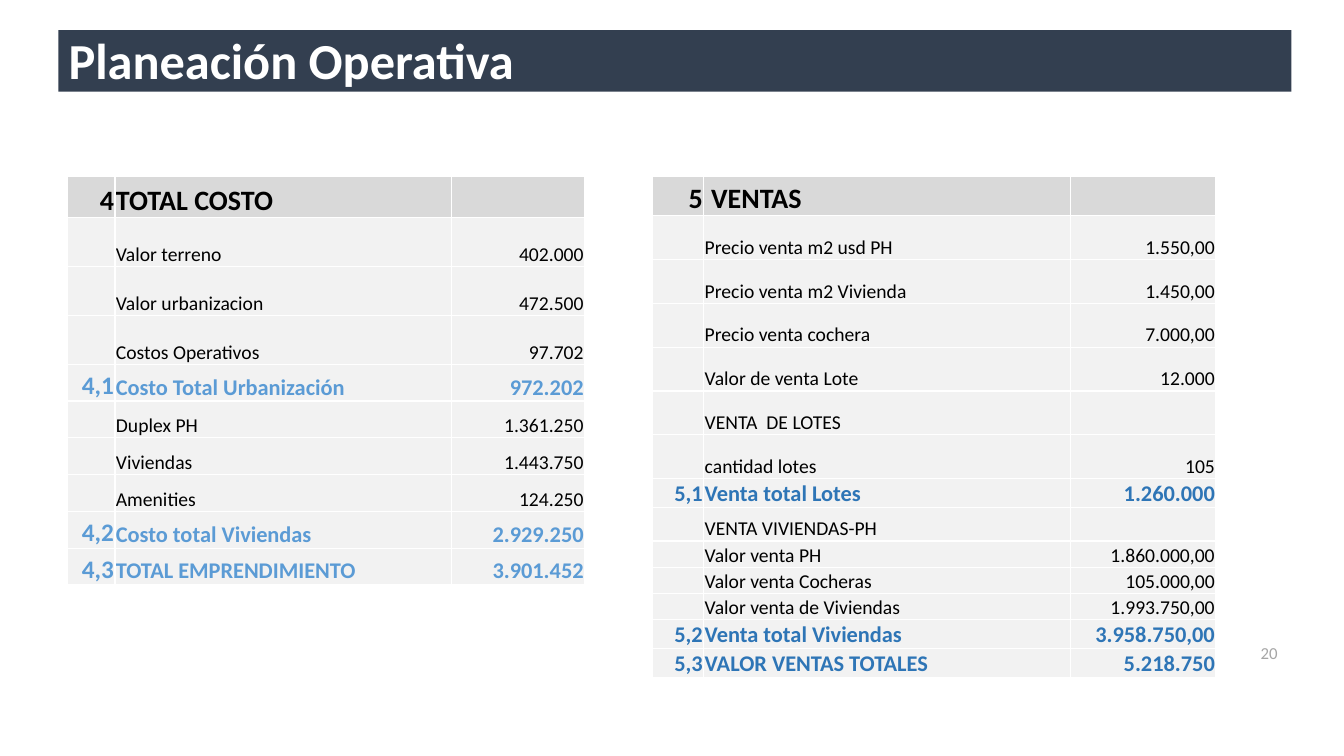
"""Build the "Planeación Operativa" slide with its cost and sales tables."""
import lxml.etree
import pptx
import pptx.dml.color
import pptx.enum.shapes
import pptx.enum.text
import pptx.oxml.ns
import pptx.util

RGBColor = pptx.dml.color.RGBColor
Inches = pptx.util.Inches
Pt = pptx.util.Pt
ALIGN = pptx.enum.text.PP_ALIGN
MIDDLE = pptx.enum.text.MSO_ANCHOR.MIDDLE
BOTTOM = pptx.enum.text.MSO_ANCHOR.BOTTOM
qn = pptx.oxml.ns.qn

FONT = "Calibri"
WHITE = RGBColor(0xFF, 0xFF, 0xFF)
BLACK = RGBColor(0x00, 0x00, 0x00)
NAVY = RGBColor(0x33, 0x3F, 0x50)
HEADER_GRAY = RGBColor(0xD9, 0xD9, 0xD9)
BODY_GRAY = RGBColor(0xF2, 0xF2, 0xF2)
NUMBER_GRAY = RGBColor(0xA6, 0xA6, 0xA6)
LIGHT_BLUE = RGBColor(0x5B, 0x9B, 0xD5)
DARK_BLUE = RGBColor(0x2E, 0x75, 0xB6)

TABLE_TOP = 1.75
COST_ROWS = [
    (0.41, "4", "TOTAL COSTO", ""),
    (0.485, "", "Valor terreno", "402.000"),
    (0.485, "", "Valor urbanizacion", "472.500"),
    (0.485, "", "Costos Operativos", "97.702"),
    (0.365, "4,1", "Costo Total Urbanización", "972.202"),
    (0.365, "", "Duplex PH", "1.361.250"),
    (0.365, "", "Viviendas", "1.443.750"),
    (0.365, "", "Amenities", "124.250"),
    (0.365, "4,2", "Costo total Viviendas", "2.929.250"),
    (0.365, "4,3", "TOTAL EMPRENDIMIENTO", "3.901.452"),
]
SALES_ROWS = [
    (0.39, "5", " VENTAS", ""),
    (0.435, "", "Precio venta m2 usd PH", "1.550,00"),
    (0.435, "", "Precio venta m2 Vivienda", "1.450,00"),
    (0.435, "", "Precio venta cochera", "7.000,00"),
    (0.435, "", "Valor de venta Lote", "12.000"),
    (0.435, "", "VENTA  DE LOTES", ""),
    (0.435, "", "cantidad lotes", "105"),
    (0.29, "5,1", "Venta total Lotes", "1.260.000"),
    (0.33, "", "VENTA VIVIENDAS-PH", ""),
    (0.26, "", "Valor venta PH", "1.860.000,00"),
    (0.26, "", "Valor venta Cocheras", "105.000,00"),
    (0.26, "", "Valor venta de Viviendas", "1.993.750,00"),
    (0.29, "5,2", "Venta total Viviendas", "3.958.750,00"),
    (0.29, "5,3", "VALOR VENTAS TOTALES", "5.218.750"),
]
TABLES = [
    (0.67, (0.47, 3.34, 1.32), COST_ROWS, LIGHT_BLUE, 18),
    (6.47, (0.51, 3.64, 1.44), SALES_ROWS, DARK_BLUE, 16),
]


def write(paragraph, text, size, color, bold=False):
    """Add one formatted run to a paragraph."""
    run = paragraph.add_run()
    run.text = text
    run.font.name = FONT
    run.font.size = Pt(size)
    run.font.bold = bold
    run.font.color.rgb = color


def add_borders(cell):
    """Give a cell thin white borders on all sides."""
    properties = cell._tc.get_or_add_tcPr()
    for side in ("a:lnL", "a:lnR", "a:lnT", "a:lnB"):
        line = lxml.etree.SubElement(properties, qn(side), w=str(Pt(1)))
        fill = lxml.etree.SubElement(line, qn("a:solidFill"))
        lxml.etree.SubElement(fill, qn("a:srgbClr"), val=str(WHITE))


presentation = pptx.Presentation()
presentation.slide_width = Inches(13.33)
presentation.slide_height = Inches(7.5)
slide = presentation.slides.add_slide(presentation.slide_layouts[5])

band = slide.shapes.add_shape(
    pptx.enum.shapes.MSO_SHAPE.RECTANGLE,
    Inches(0.58), Inches(0.3), Inches(12.23), Inches(0.61))
band.shadow.inherit = False
band.fill.solid()
band.fill.fore_color.rgb = NAVY
band.line.fill.background()

title = slide.shapes.title
title.left, title.top = Inches(0.58), Inches(0.24)
title.width, title.height = Inches(9.09), Inches(0.77)
title.text_frame.auto_size = pptx.enum.text.MSO_AUTO_SIZE.NONE
title.text_frame.vertical_anchor = MIDDLE
title_paragraph = title.text_frame.paragraphs[0]
title_paragraph.alignment = ALIGN.LEFT
title_paragraph.line_spacing = 0.9
write(title_paragraph, "Planeación Operativa", 36, WHITE, True)
band._element.addnext(title._element)

for left, widths, rows, accent, accent_size in TABLES:
    table = slide.shapes.add_table(
        len(rows), len(widths), Inches(left), Inches(TABLE_TOP),
        Inches(sum(widths)), Inches(sum(row[0] for row in rows))).table
    table.horz_banding = False
    for column, width in zip(table.columns, widths):
        column.width = Inches(width)
    for row_index, (height, *texts) in enumerate(rows):
        table.rows[row_index].height = Inches(height)
        is_header = row_index == 0
        is_total = bool(texts[0]) and not is_header
        for column_index, text in enumerate(texts):
            cell = table.cell(row_index, column_index)
            add_borders(cell)
            cell.fill.solid()
            cell.fill.fore_color.rgb = HEADER_GRAY if is_header else BODY_GRAY
            cell.margin_left = cell.margin_right = cell.margin_top = Inches(0.01)
            cell.margin_bottom = 0
            cell.vertical_anchor = BOTTOM
            paragraph = cell.text_frame.paragraphs[0]
            paragraph.alignment = ALIGN.LEFT if column_index == 1 else ALIGN.RIGHT
            if not text:
                lxml.etree.SubElement(paragraph._p, qn("a:endParaRPr"), sz="1400")
            elif is_header:
                write(paragraph, text, 20, BLACK, True)
            elif is_total:
                size = accent_size if column_index == 0 else 16
                write(paragraph, text, size, accent, True)
            else:
                write(paragraph, text, 14, BLACK)

number_box = slide.shapes.add_textbox(
    Inches(12.27), Inches(6.19), Inches(0.5), Inches(0.57))
number_box.text_frame.word_wrap = True
number_box.text_frame.vertical_anchor = MIDDLE
number_paragraph = number_box.text_frame.paragraphs[0]
number_paragraph.alignment = ALIGN.RIGHT
write(number_paragraph, "20", 12, NUMBER_GRAY)

presentation.save("out.pptx")
